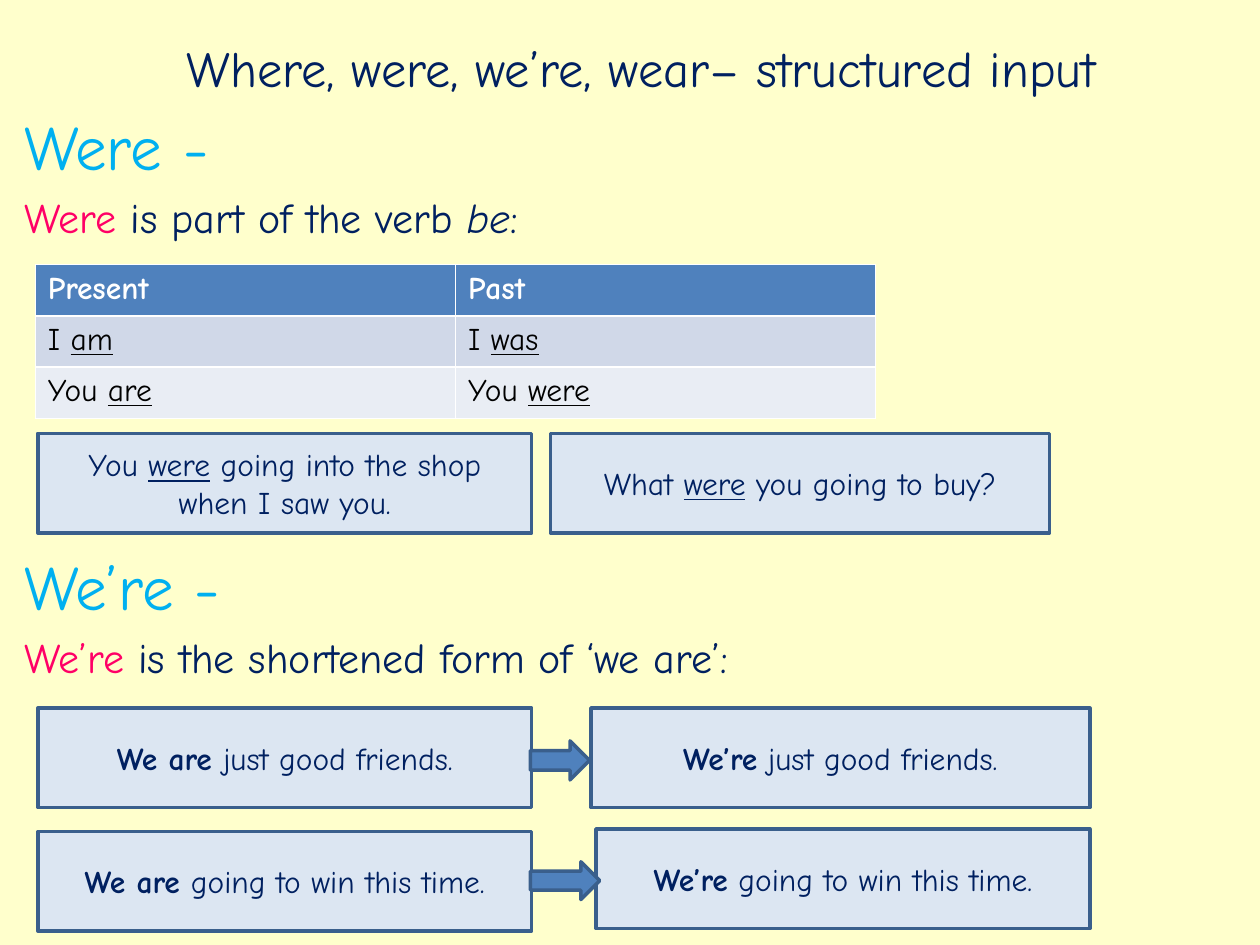
from pptx import Presentation
from pptx.dml.color import RGBColor
from pptx.enum.shapes import MSO_SHAPE
from pptx.enum.text import MSO_ANCHOR, PP_ALIGN
from pptx.util import Inches, Pt

RECT, ARROW = MSO_SHAPE.RECTANGLE, MSO_SHAPE.RIGHT_ARROW
MIDDLE, CENTER = MSO_ANCHOR.MIDDLE, PP_ALIGN.CENTER

CREAM = RGBColor(0xFF, 0xFF, 0xCC)
NAVY = RGBColor(0x00, 0x20, 0x60)
SKY = RGBColor(0x00, 0xB0, 0xF0)
PINK = RGBColor(0xFF, 0x00, 0x66)
PALE = RGBColor(0xDC, 0xE6, 0xF2)
BLUE = RGBColor(0x4F, 0x81, 0xBD)
EDGE = RGBColor(0x3A, 0x5F, 0x8C)
WHITE = RGBColor(0xFF, 0xFF, 0xFF)
BLACK = RGBColor(0x00, 0x00, 0x00)
BANDS = [BLUE, RGBColor(0xD0, 0xD8, 0xE8), RGBColor(0xE9, 0xED, 0xF4)]

FONT = "Comic Neue"
WIDTH, HEIGHT = Inches(10), Inches(7.5)
LEFT, BOX_W, WIDE_W, BOX_H = 3, 39.2, 39.6, 10.53
ARROW_X = LEFT + BOX_W - 0.1


def area(x, y, w, h):
    """Turn percentages of the slide's size into lengths."""
    return [int(v * side / 100) for v, side in zip((x, y, w, h), (WIDTH, HEIGHT) * 2)]


def add_runs(p, runs, size=18, color=NAVY):
    """Add (text, style) runs, where style holds any of b, i and u."""
    for text, style in runs:
        r = p.add_run()
        r.text = text
        r.font.name, r.font.size = FONT, Pt(size)
        r.font.color.rgb = color
        r.font.bold = "b" in style
        r.font.italic = "i" in style
        r.font.underline = "u" in style


def add_text(s, place):
    """Add a wrapping text box and return its text frame."""
    tf = s.shapes.add_textbox(*area(*place)).text_frame
    tf.word_wrap = True
    return tf


def add_title(s, text):
    """Add the centred slide title."""
    tf = add_text(s, (5.9, 3.07, 90, 8.13))
    tf.vertical_anchor = MIDDLE
    p = tf.paragraphs[0]
    p.alignment = CENTER
    add_runs(p, [(text, "")], 28.8)


def add_section(s, y, word, rule):
    """Add a word as a heading with its rule underneath."""
    tf = add_text(s, (1, y, 98, 14.67))
    add_runs(tf.paragraphs[0], [(word + " -", "")], 36, SKY)
    p = tf.add_paragraph()
    p.space_before = Pt(4.8)
    add_runs(p, [(word + " ", "")], 24, PINK)
    add_runs(p, rule, 24)


def add_outlined(s, kind, place, fill):
    """Add a filled preset shape with the dark blue edge."""
    sp = s.shapes.add_shape(kind, *area(*place))
    sp.shadow.inherit = False
    sp.fill.solid()
    sp.fill.fore_color.rgb = fill
    sp.line.color.rgb = EDGE
    sp.line.width = Pt(2)
    return sp


def add_example(s, x, y, w, runs):
    """Add a pale box holding an example sentence."""
    tf = add_outlined(s, RECT, (x, y, w, BOX_H), PALE).text_frame
    tf.word_wrap = True
    tf.vertical_anchor = MIDDLE
    p = tf.paragraphs[0]
    p.alignment = CENTER
    add_runs(p, runs)


def add_tenses(s, rows):
    """Add the table of present and past forms."""
    place = area(2.8, 28, 66.7, 16.27)
    table = s.shapes.add_table(len(rows), len(rows[0]), *place).table
    for i, row in enumerate(rows):
        for j, runs in enumerate(row):
            cell = table.cell(i, j)
            cell.fill.solid()
            cell.fill.fore_color.rgb = BANDS[i]
            add_runs(cell.text_frame.paragraphs[0], runs, color=BLACK if i else WHITE)


def main():
    """Build the slide and save it."""
    prs = Presentation()
    prs.slide_width, prs.slide_height = WIDTH, HEIGHT
    s = prs.slides.add_slide(prs.slide_layouts[6])
    s.background.fill.solid()
    s.background.fill.fore_color.rgb = CREAM

    add_title(s, "Where, were, we’re, wear– structured input")
    add_section(s, 10.67, "Were", [("is part of the verb ", ""), ("be", "i"), (":", "")])
    add_section(s, 57.33, "We’re", [("is the shortened form of ‘we are’:", "")])
    add_tenses(s, [
        [[("Present", "b")], [("Past", "b")]],
        [[("I ", ""), ("am", "u")], [("I ", ""), ("was", "u")]],
        [[("You ", ""), ("are", "u")], [("You ", ""), ("were", "u")]],
    ])

    add_example(s, LEFT, 45.87, BOX_W,
                [("You ", ""), ("were", "u"), (" going into the shop when I saw you.", "")])
    add_example(s, 43.7, 45.87, WIDE_W,
                [("What ", ""), ("were", "u"), (" you going to buy?", "")])

    pairs = [
        ("just good friends.", 74.93, (46.9, 74.93, WIDE_W), (78.4, 4.7, 4.13)),
        ("going to win this time.", 88, (47.3, 87.73, BOX_W), (91.2, 5.5, 4)),
    ]
    for ending, y, short_place, (arrow_y, arrow_w, arrow_h) in pairs:
        add_example(s, LEFT, y, BOX_W, [("We are ", "b"), (ending, "")])
        add_example(s, *short_place, [("We’re", "b"), (" " + ending, "")])
        add_outlined(s, ARROW, (ARROW_X, arrow_y, arrow_w, arrow_h), BLUE)

    prs.save("out.pptx")


if __name__ == "__main__":
    main()
